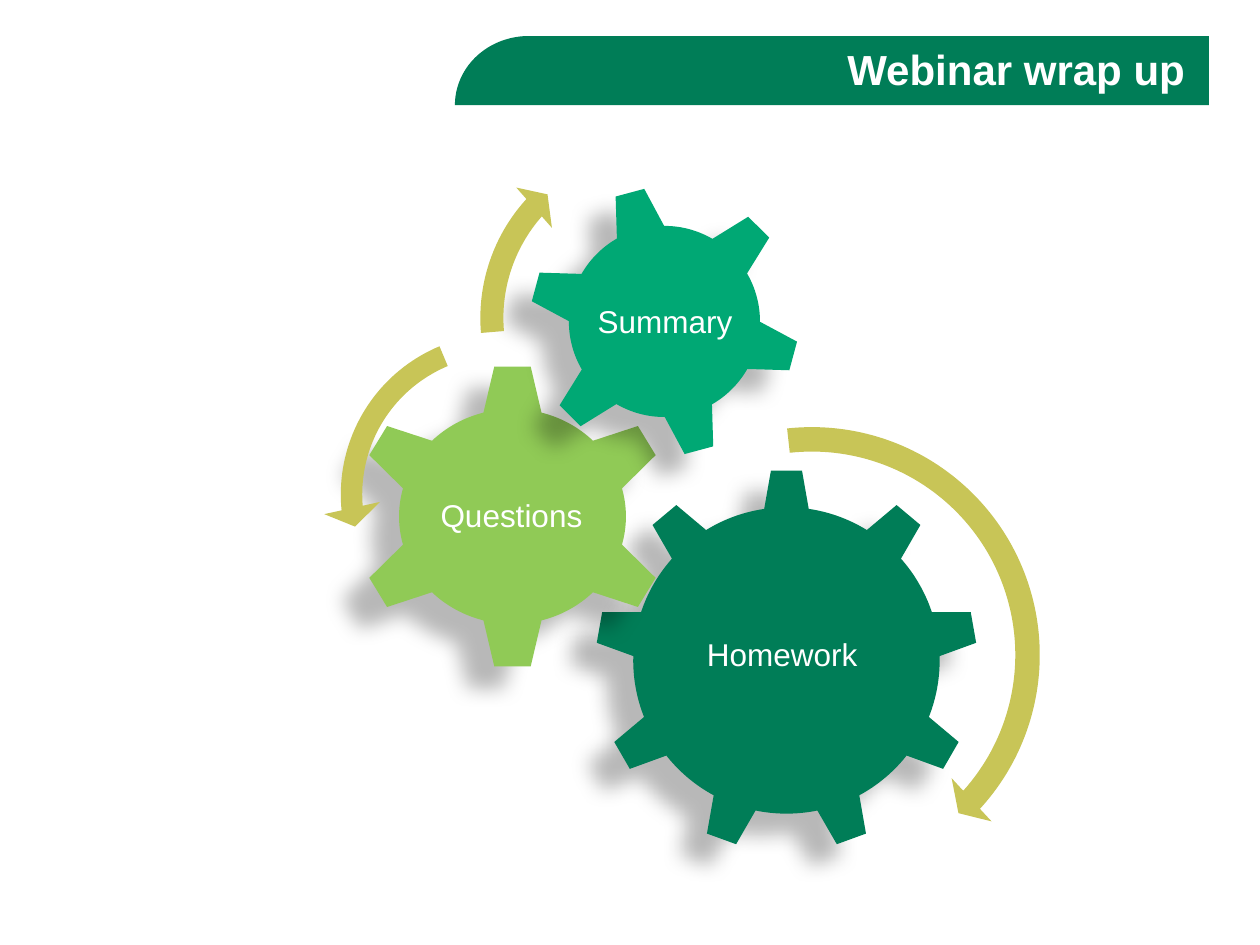
from dataclasses import dataclass
from math import cos, pi, sin

from lxml.etree import SubElement
from pptx import Presentation
from pptx.dml.color import RGBColor
from pptx.enum.shapes import MSO_SHAPE
from pptx.enum.text import MSO_ANCHOR, PP_ALIGN
from pptx.oxml.ns import qn
from pptx.util import Emu, Pt

EMU_PER_PX = 914400 / 126


@dataclass(frozen=True)
class Theme:
    """Colours, font and type sizes of the slide."""
    forest: str = "007D57"
    leaf: str = "90CA56"
    emerald: str = "00A874"
    olive: str = "C8C557"
    white: str = "FFFFFF"
    shade: str = "000000"
    font: str = "Arial"
    title_size: int = 24
    label_size: int = 18


THEME = Theme()


def px(length):
    """Turn a length in px into EMU."""
    return Emu(round(length * EMU_PER_PX))


def paint(shape, color):
    """Give a shape a plain fill without line or shadow."""
    shape.shadow.inherit = False
    shape.fill.solid()
    shape.fill.fore_color.rgb = RGBColor.from_string(color)
    shape.line.fill.background()


def cast_shadow(shape):
    """Add a soft shadow towards the lower left."""
    effects = shape._element.spPr.find(qn("a:effectLst"))
    shadow = SubElement(effects, qn("a:outerShdw"), blurRad=str(Pt(11.8)),
                        dist=str(Pt(19.7)), dir=str(141 * 60000),
                        algn="ctr", rotWithShape="0")
    shade = SubElement(shadow, qn("a:srgbClr"), val=THEME.shade)
    SubElement(shade, qn("a:alpha"), val="28000")


def add_text(slide, text, box, size, align, margins, bold=False):
    """Add one white, vertically centred paragraph."""
    frame = slide.shapes.add_textbox(*map(px, box)).text_frame
    frame.word_wrap = True
    frame.vertical_anchor = MSO_ANCHOR.MIDDLE
    frame.margin_left = frame.margin_right = px(margins[0])
    frame.margin_top = frame.margin_bottom = px(margins[1])
    paragraph = frame.paragraphs[0]
    paragraph.text = text
    paragraph.alignment = align
    paragraph.font.name = THEME.font
    paragraph.font.size = Pt(size)
    paragraph.font.bold = bold
    paragraph.font.color.rgb = RGBColor.from_string(THEME.white)
    return paragraph


def add_banner(slide, title):
    """Add the title on a bar with a rounded upper left corner."""
    left, top, right, bottom, radius, steps = 455, 36, 1209, 105, 74, 40
    angles = [pi / 2 * step / steps for step in range(steps + 1)]
    corner = [(px(left + radius * (1 - cos(angle))),
               px(bottom - (bottom - top) * sin(angle))) for angle in angles]
    outline = slide.shapes.build_freeform(*corner[0])
    outline.add_line_segments(
        corner[1:] + [(px(right), px(top)), (px(right), px(bottom))])
    paint(outline.convert_to_shape(), THEME.forest)
    add_text(slide, title, (530, 39, 655, 59), THEME.title_size,
             PP_ALIGN.RIGHT, (0, 6), bold=True)


def add_gear(slide, label, kind, color, box, label_box, rotation=0):
    """Add a shadowed gear and its label."""
    gear = slide.shapes.add_shape(kind, *map(px, box))
    gear.rotation = rotation
    paint(gear, color)
    cast_shadow(gear)
    paragraph = add_text(slide, label, label_box, THEME.label_size,
                         PP_ALIGN.CENTER, (4, 4))
    paragraph.line_spacing = 0.9


def add_turn_arrow(slide, kind, left, top, size, adjustments):
    """Add a circular arrow showing which way a gear turns."""
    arrow = slide.shapes.add_shape(kind, *map(px, (left, top, size, size)))
    for index, value in enumerate(adjustments):
        arrow.adjustments[index] = value
    paint(arrow, THEME.olive)


def main():
    """Build and save the slide."""
    deck = Presentation()
    deck.slide_width, deck.slide_height = px(1260), px(945)
    slide = deck.slides.add_slide(deck.slide_layouts[6])

    add_banner(slide, "Webinar wrap up")
    add_gear(slide, "Homework ", MSO_SHAPE.GEAR_9, THEME.forest,
             (595, 469, 383, 383), (672, 558, 229, 197))
    add_gear(slide, "Questions", MSO_SHAPE.GEAR_6, THEME.leaf,
             (353, 363, 319, 307), (431, 441, 161, 152))
    add_gear(slide, "Summary", MSO_SHAPE.GEAR_6, THEME.emerald,
             (528, 185, 273, 273), (588, 246, 154, 154), rotation=345)

    add_turn_arrow(slide, MSO_SHAPE.CIRCULAR_ARROW, 567, 410, 490,
                   (0.05, 2.99, 25.33, 158.25, 0.06))
    add_turn_arrow(slide, MSO_SHAPE.LEFT_CIRCULAR_ARROW, 323, 316, 357,
                   (0.06, 4.3, 104.89, 148.38, 0.08))
    add_turn_arrow(slide, MSO_SHAPE.CIRCULAR_ARROW, 465, 126, 384,
                   (0.06, 3.94, 133.14, 105.08, 0.07))

    deck.save("out.pptx")


if __name__ == "__main__":
    main()
